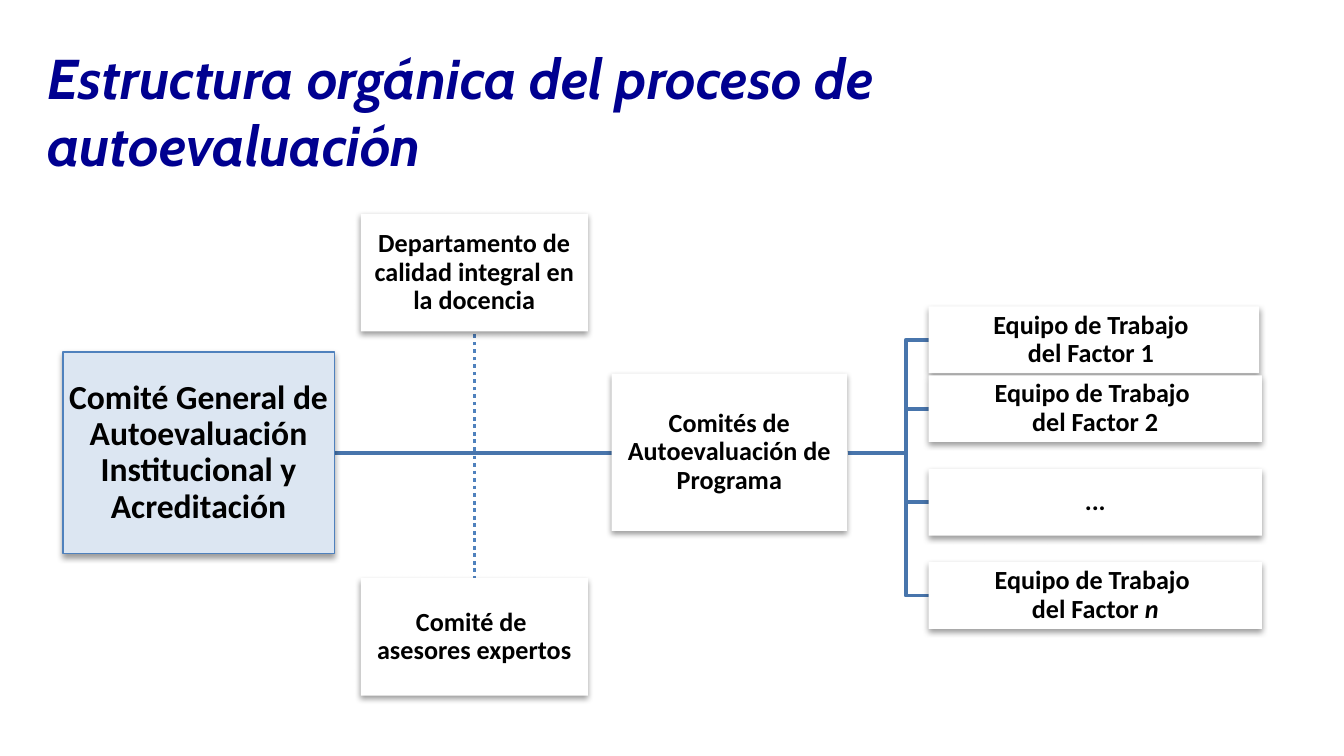
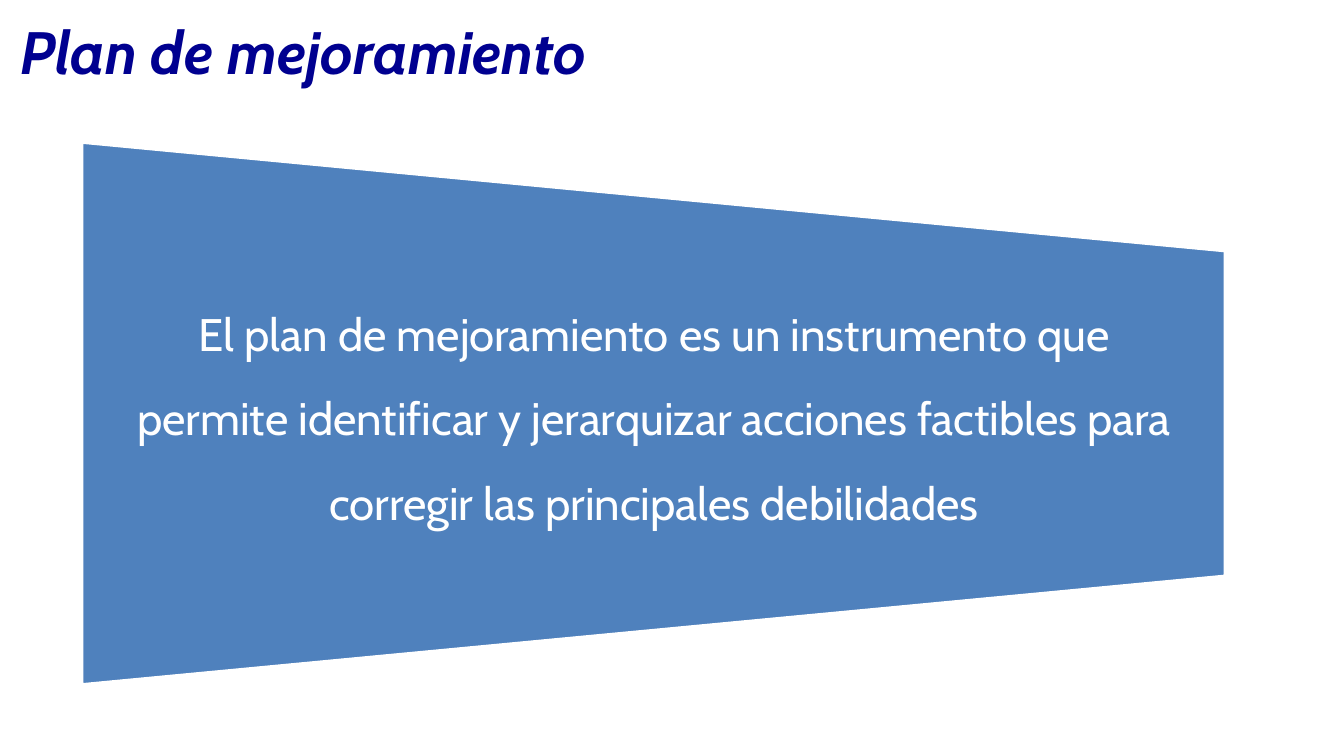
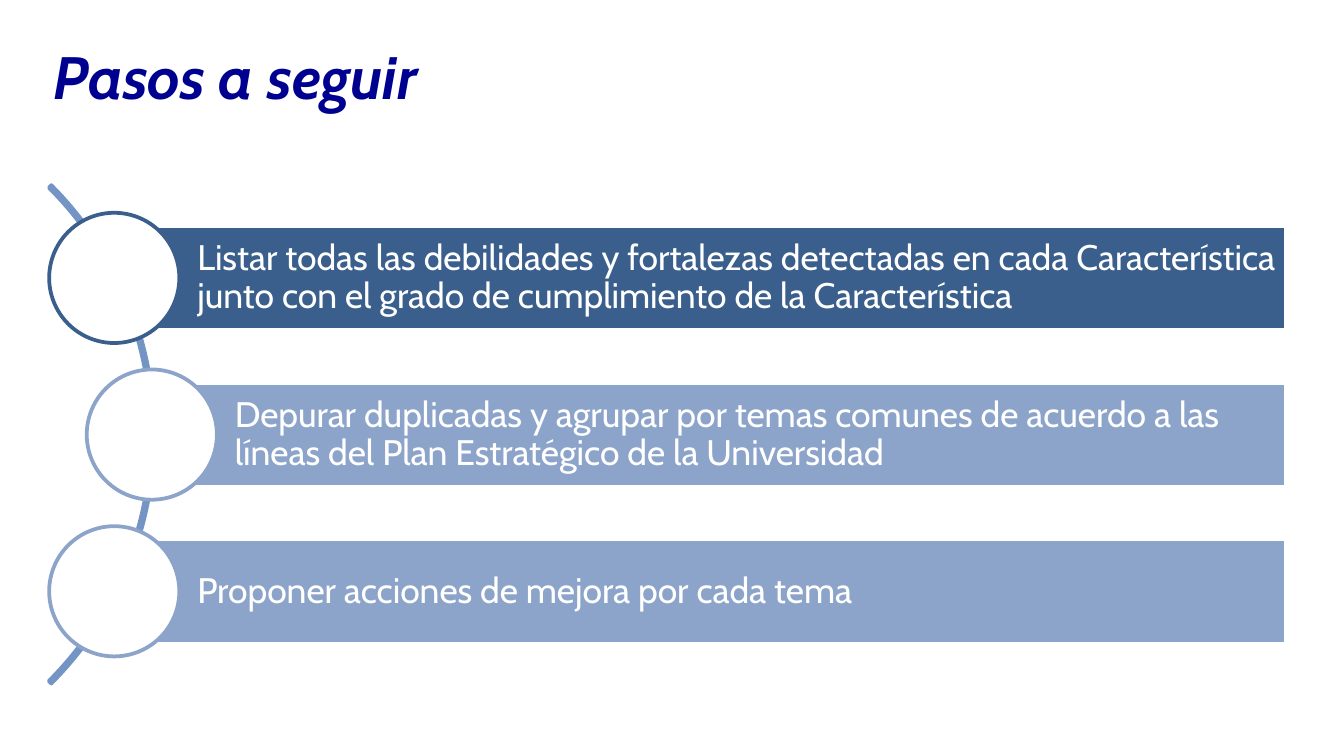
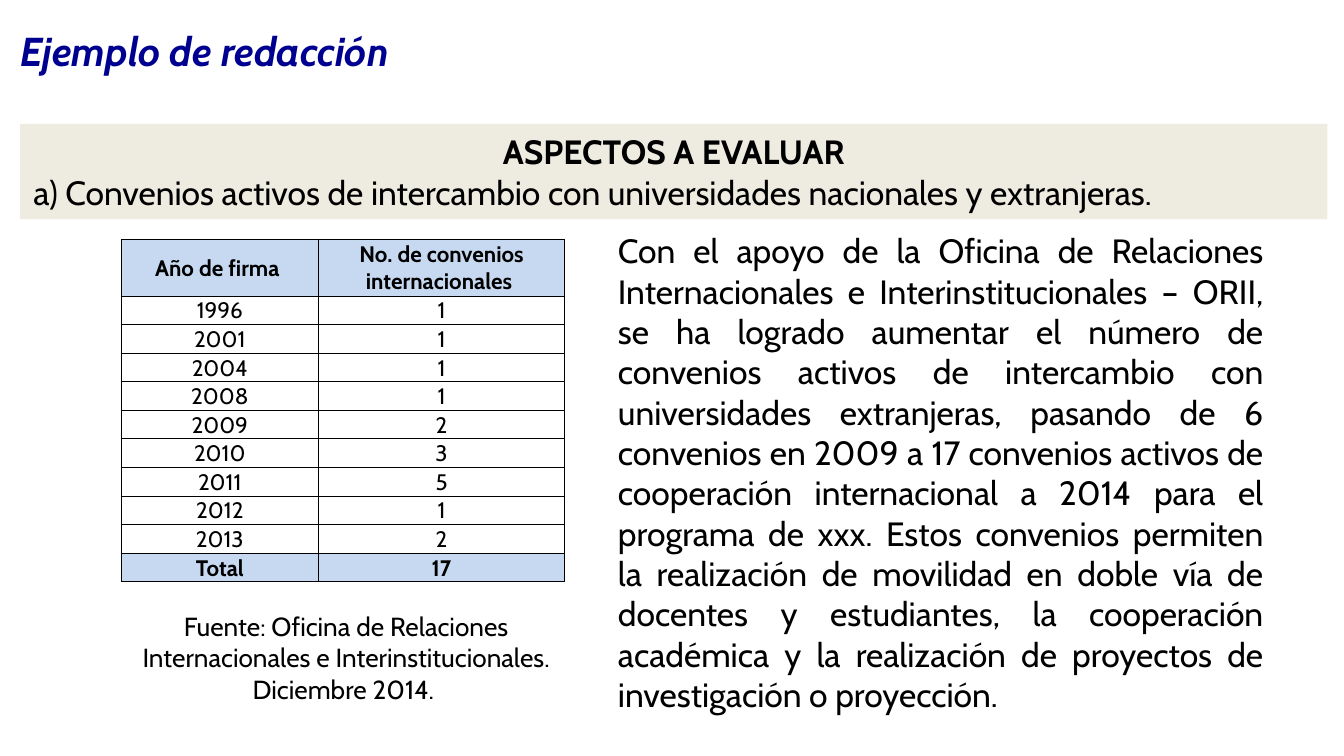
from lxml.etree import SubElement
from pptx import Presentation
from pptx.dml.color import RGBColor
from pptx.enum.dml import MSO_LINE
from pptx.enum.shapes import MSO_CONNECTOR, MSO_SHAPE
from pptx.enum.text import MSO_ANCHOR, MSO_AUTO_SIZE, PP_ALIGN
from pptx.oxml.ns import qn
from pptx.util import Cm, Pt

# Shared look
NAVY = RGBColor(0x00, 0x00, 0x90)
BLACK = RGBColor(0x00, 0x00, 0x00)
WHITE = RGBColor(0xFF, 0xFF, 0xFF)
BLUE = RGBColor(0x4F, 0x81, 0xBD)
LINK_BLUE = RGBColor(0x48, 0x75, 0xAC)
PALE_BLUE = RGBColor(0xDC, 0xE6, 0xF2)
ARC_BLUE = RGBColor(0x73, 0x94, 0xC5)
DARK_STEP = RGBColor(0x3A, 0x5F, 0x8C)
LIGHT_STEP = RGBColor(0x8C, 0xA4, 0xC9)
SAND = RGBColor(0xEE, 0xEC, 0xE1)
HEADER_BLUE = RGBColor(0xC6, 0xD9, 0xF1)
MAIN_FONT, CHART_FONT = "Cabin", "Calibri"
TITLE_ONLY = 5

AGREEMENTS = [
    ("Año de firma ", "No. de convenios internacionales "),
    ("1996", "1"), ("2001", "1"), ("2004", "1"), ("2008", "1"), ("2009", "2"),
    ("2010", "3"), ("2011", "5"), ("2012", "1"), ("2013", "2"), ("Total", "17"),
]


# Text
def write(para, text, size, colour=BLACK, font=MAIN_FONT, bold=False, italic=False):
    span = para.add_run()
    span.text = text
    span.font.name, span.font.size = font, Pt(size)
    span.font.bold, span.font.italic = bold, italic
    span.font.color.rgb = colour
    return span


def set_frame(shape, insets=(0.25, 0.13, 0.25, 0.13), anchor=MSO_ANCHOR.MIDDLE,
              align=PP_ALIGN.LEFT, spacing=None):
    """Format the text frame and return its first paragraph."""
    frame = shape.text_frame
    frame.word_wrap = True
    frame.auto_size = MSO_AUTO_SIZE.NONE
    frame.vertical_anchor = anchor
    (frame.margin_left, frame.margin_top,
     frame.margin_right, frame.margin_bottom) = map(Cm, insets)
    para = frame.paragraphs[0]
    para.alignment = align
    if spacing:
        para.line_spacing = spacing
    return para


def add_page(deck, title, left, top, width=25.4, height=0.86, size=32):
    page = deck.slides.add_slide(deck.slide_layouts[TITLE_ONLY])
    heading = page.shapes.title
    heading.left, heading.top = Cm(left), Cm(top)
    heading.width, heading.height = Cm(width), Cm(height)
    write(set_frame(heading), title, size, NAVY, bold=True, italic=True)
    return page


def add_text(page, area, text, size, **layout):
    box = page.shapes.add_textbox(*map(Cm, area))
    return write(set_frame(box, **layout), text, size)


# Shapes and lines
def add_block(page, kind, area, fill=None, line=None, width=2):
    block = page.shapes.add_shape(kind, *map(Cm, area))
    block.shadow.inherit = False
    if fill is None:
        block.fill.background()
    else:
        block.fill.solid()
        block.fill.fore_color.rgb = fill
    if line is None:
        block.line.fill.background()
    else:
        block.line.color.rgb = line
        block.line.width = Pt(width)
    return block


def add_soft_shadow(block):
    effects = block._element.spPr.find(qn("a:effectLst"))
    shadow = SubElement(effects, qn("a:outerShdw"), blurRad="40000", dist="20000",
                        dir="5400000", rotWithShape="0")
    colour = SubElement(shadow, qn("a:srgbClr"), val="000000")
    SubElement(colour, qn("a:alpha"), val="38000")


def add_unit(page, area, lines, size=14, fill=WHITE, line=None):
    """Box of the organisation chart; returns its paragraph."""
    box = add_block(page, MSO_SHAPE.RECTANGLE, area, fill, line, 0.75)
    add_soft_shadow(box)
    para = set_frame(box, (0.03,) * 4, align=PP_ALIGN.CENTER, spacing=0.9)
    for number, text in enumerate(lines):
        if number:
            para.add_line_break()
        write(para, text, size, font=CHART_FONT, bold=True)
    return para


def add_route(page, points, colour, dash=None):
    start, *others = [(Cm(x), Cm(y)) for x, y in points]
    builder = page.shapes.build_freeform(*start)
    builder.add_line_segments(others, close=False)
    route = builder.convert_to_shape()
    route.shadow.inherit = False
    route.fill.background()
    route.line.color.rgb = colour
    route.line.width = Pt(2)
    if dash:
        route.line.dash_style = dash


def add_straight(page, x1, y1, x2, y2):
    link = page.shapes.add_connector(MSO_CONNECTOR.STRAIGHT, *map(Cm, (x1, y1, x2, y2)))
    link.line.color.rgb = LINK_BLUE
    link.line.width = Pt(2.25)
    SubElement(link._element.spPr, qn("a:effectLst"))


# Table
def add_borders(cell):
    props = cell._tc.get_or_add_tcPr()
    for side in ("lnL", "lnR", "lnT", "lnB"):
        edge = SubElement(props, qn(f"a:{side}"), w="6350")
        SubElement(SubElement(edge, qn("a:solidFill")), qn("a:srgbClr"), val="000000")


def add_agreement_table(page, left, top, widths, header_height, row_height):
    count = len(AGREEMENTS)
    height = header_height + row_height * (count - 1)
    table = page.shapes.add_table(count, len(widths), Cm(left), Cm(top),
                                  Cm(sum(widths)), Cm(height)).table
    table.first_row = table.horz_banding = False
    for column, width in zip(table.columns, widths):
        column.width = Cm(width)
    for index, values in enumerate(AGREEMENTS):
        strong = index in (0, count - 1)
        table.rows[index].height = Cm(row_height if index else header_height)
        for cell, value in zip(table.rows[index].cells, values):
            add_borders(cell)
            if strong:
                cell.fill.solid()
                cell.fill.fore_color.rgb = HEADER_BLUE
            else:
                cell.fill.background()
            cell.vertical_anchor = MSO_ANCHOR.MIDDLE
            cell.margin_left = cell.margin_right = cell.margin_top = Cm(0.02)
            cell.margin_bottom = 0
            para = cell.text_frame.paragraphs[0]
            para.alignment = PP_ALIGN.CENTER
            write(para, value, 12, bold=strong)


# Slides
def build_structure(deck):
    page = add_page(deck, "Estructura orgánica del proceso de autoevaluación",
                    0.64, 0.94, 20.29, 2.31, 30)
    axis, general_right, cross, program_right = 8.56, 6.32, 8.97, 16.02
    spine, team_left, team_height = 17.12, 17.55, 1.26
    teams = [
        (5.79, 6.25, ["Equipo de Trabajo ", "del Factor 1 "]),
        (7.09, 6.3, ["Equipo de Trabajo ", "del Factor 2"]),
        (8.86, 6.3, ["..."]),
        (10.62, 6.3, ["Equipo de Trabajo ", "del Factor "]),
    ]
    # Links
    for end in (10.92, 6.27):
        add_route(page, [(general_right, axis), (cross, axis), (cross, end)],
                  BLUE, MSO_LINE.ROUND_DOT)
    for top, _, _ in teams:
        middle = top + team_height / 2
        add_route(page, [(program_right, axis), (spine, axis), (spine, middle),
                         (team_left, middle)], LINK_BLUE)
    add_straight(page, general_right, axis, 11.56, axis)
    # Units
    add_unit(page, (1.19, 6.65, 5.13, 3.81),
             ["Comité General de Autoevaluación Institucional y Acreditación"],
             18, PALE_BLUE, BLUE)
    add_unit(page, (11.56, 7.06, 4.45, 2.97), ["Comités de Autoevaluación de Programa"])
    for top, width, lines in teams:
        para = add_unit(page, (team_left, top, width, team_height), lines)
    write(para, "n", 14, font=CHART_FONT, bold=True, italic=True)
    add_unit(page, (6.82, 4.04, 4.29, 2.22),
             ["Departamento de calidad integral en la docencia"])
    add_unit(page, (6.82, 10.92, 4.29, 2.22), ["Comité de ", "asesores expertos"])


def build_plan(deck):
    page = add_page(deck, "Plan de mejoramiento", 0.13, 0.53)
    funnel = add_block(page, MSO_SHAPE.FLOWCHART_MANUAL_OPERATION,
                       (7.22, -3, 10.26, 21.62), BLUE, WHITE)
    funnel.rotation = 270
    span = add_text(page, (1.55, 4.72, 21.62, 6.15),
                    "El plan de mejoramiento es un instrumento que permite identificar y "
                    "jerarquizar acciones factibles para corregir las principales debilidades",
                    42, insets=(0.74, 0, 0.74, 0), align=PP_ALIGN.CENTER, spacing=0.9)
    span.font.color.rgb = WHITE
    span.font._element.set("baseline", "3000")


def build_steps(deck):
    page = add_page(deck, "Pasos a seguir", 0.76, 0.99)
    arc = add_block(page, MSO_SHAPE.BLOCK_ARC, (-10.39, 1.55, 13.31, 13.31), line=ARC_BLUE)
    for index, value in enumerate((189, 27, 0.005)):
        arc.adjustments[index] = value
    steps = [
        (2.16, DARK_STEP, "Listar todas las debilidades y fortalezas detectadas en cada "
                          "Característica junto con el grado de cumplimiento de la "
                          "Característica"),
        (2.87, LIGHT_STEP, "Depurar duplicadas y agrupar por temas comunes de acuerdo a las "
                           "líneas del Plan Estratégico de la Universidad"),
        (2.16, LIGHT_STEP, "Proponer acciones de mejora por cada tema"),
    ]
    first_top, pitch, right, circle = 4.27, 2.96, 24.31, 2.46
    for index, (left, colour, text) in enumerate(steps):
        top = first_top + index * pitch
        bar = add_block(page, MSO_SHAPE.RECTANGLE, (left, top, right - left, 1.97),
                        colour, WHITE)
        write(set_frame(bar, (1.57, 0.12, 0.12, 0.12), spacing=0.9), text, 19, WHITE)
        add_block(page, MSO_SHAPE.OVAL,
                  (left - circle / 2, top - 0.25, circle, circle), WHITE, colour)


def build_example(deck):
    page = add_page(deck, "Ejemplo de redacción", 0.13, 0.53, size=21.6)
    # Criterion band
    band = add_block(page, MSO_SHAPE.RECTANGLE, (0.38, 2.34, 24.71, 1.8), SAND)
    write(set_frame(band, align=PP_ALIGN.CENTER), "ASPECTOS A EVALUAR", 18, bold=True)
    aspect = band.text_frame.add_paragraph()
    aspect.alignment = PP_ALIGN.LEFT
    SubElement(aspect._p.get_or_add_pPr(), qn("a:buAutoNum"), type="alphaLcParenR")
    write(aspect, " Convenios activos de intercambio con universidades nacionales "
                  "y extranjeras.", 18)
    # Evidence
    add_agreement_table(page, 2.29, 4.52, (3.73, 4.65), 1.07, 0.54)
    add_text(page, (11.43, 4.22, 12.7, 10.06),
             "Con el apoyo de la Oficina de Relaciones Internacionales e "
             "Interinstitucionales – ORII, se ha logrado aumentar el número de convenios "
             "activos de intercambio con universidades extranjeras, pasando de 6 convenios "
             "en 2009 a 17 convenios activos de cooperación internacional a 2014 para el "
             "programa de xxx. Estos convenios permiten la realización de movilidad en "
             "doble vía de docentes y estudiantes, la cooperación académica y la "
             "realización de proyectos de investigación o proyección. ",
             18, anchor=MSO_ANCHOR.TOP, align=PP_ALIGN.JUSTIFY)
    add_text(page, (1.68, 11.4, 9.73, 2.06),
             "Fuente: Oficina de Relaciones Internacionales e Interinstitucionales. "
             "Diciembre 2014. ", 14, anchor=MSO_ANCHOR.TOP, align=PP_ALIGN.CENTER)


def main():
    deck = Presentation()
    deck.slide_width, deck.slide_height = Cm(25.4), Cm(14.28)
    build_structure(deck)
    build_plan(deck)
    build_steps(deck)
    build_example(deck)
    deck.save("out.pptx")


if __name__ == "__main__":
    main()
